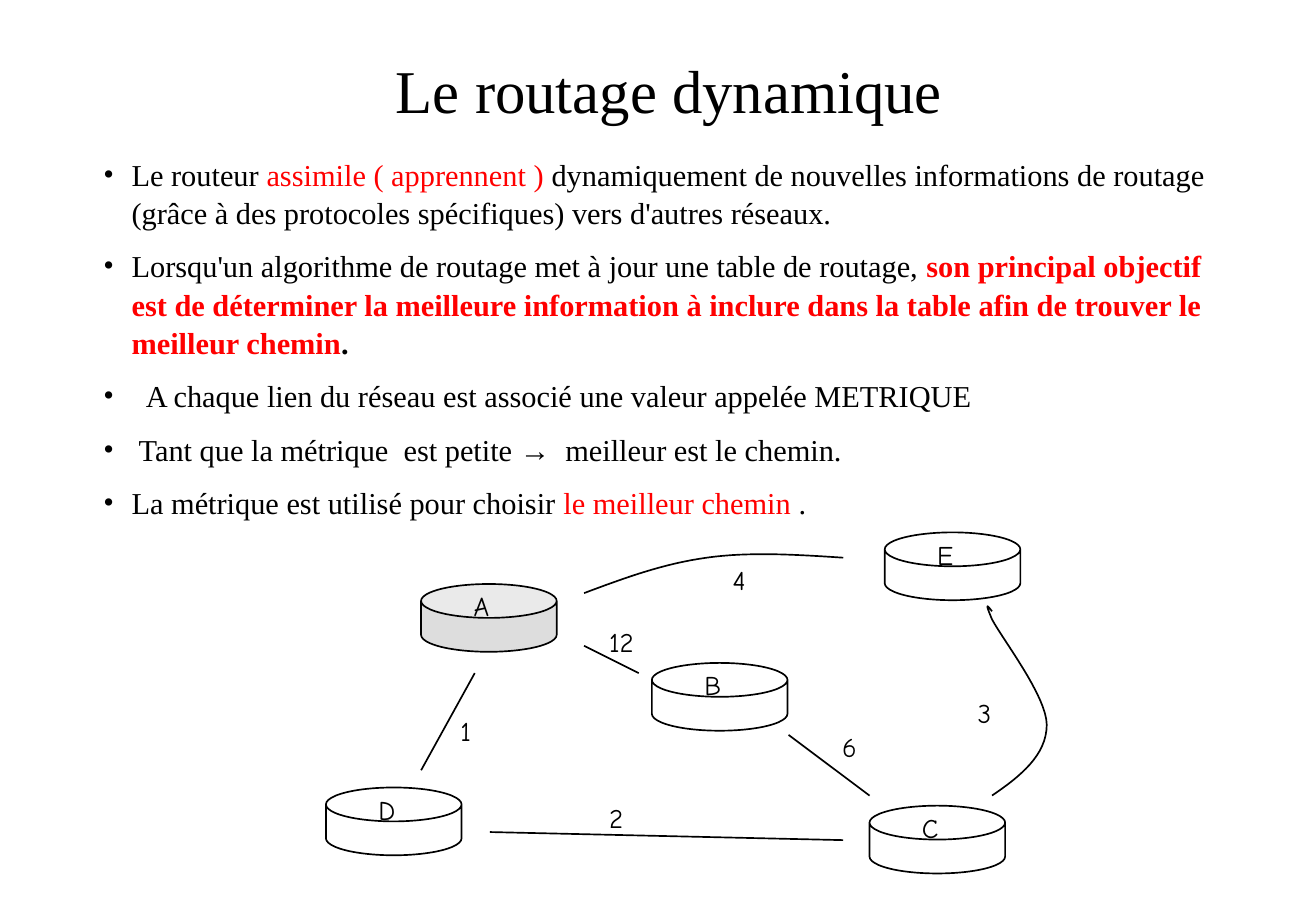
from lxml.etree import SubElement
from pptx import Presentation
from pptx.dml.color import RGBColor
from pptx.enum.shapes import MSO_CONNECTOR, MSO_SHAPE
from pptx.enum.text import MSO_ANCHOR, MSO_AUTO_SIZE, PP_ALIGN
from pptx.oxml.ns import qn
from pptx.util import Pt

PX = 7620
COLORS = {"black": "000000", "red": "FF0000", "grey": "DDDDDD"}
SERIF, HAND = "Times New Roman", "Comic Neue"

BULLETS = [
    (0, [("Le routeur ", "black", False),
         ("assimile ( apprennent )", "red", False),
         (" dynamiquement de nouvelles informations de routage "
          "(grâce à des protocoles spécifiques) vers d'autres réseaux.", "black", False)]),
    (0, [("Lorsqu'un algorithme de routage met à jour une table de routage, ", "black", False),
         ("son principal objectif est de déterminer la meilleure information à inclure "
          "dans la table afin de trouver le meilleur chemin", "red", True),
         (".", "black", True)]),
    (14, [("A chaque lien du réseau est associé une valeur appelée METRIQUE", "black", False)]),
    (7, [("Tant que la métrique  est petite →  meilleur est le chemin.", "black", False)]),
    (0, [("La métrique est utilisé pour choisir ", "black", False),
         ("le meilleur chemin", "red", False),
         (" .", "black", False)]),
]
ROUTERS = [("A", 416, 577, "grey"), ("B", 644, 655, None), ("C", 859, 796, None),
           ("D", 322, 778, None), ("E", 874, 526, None)]
LINKS = [(577, 638, 631, 665), (469, 665, 416, 761),
         (484, 822, 833, 830), (779, 726, 859, 786)]
CURVES = [
    [(577, 586), (617, 571), (655, 557), (698, 551), (740, 545), (787, 548), (833, 551)],
    [(980, 604), (976, 599), (972, 593), (980, 612), (990, 631), (1034, 688),
     (1034, 716), (1034, 746), (1008, 767), (980, 786)],
]
METRICS = [("4", 712, 551), ("1", 443, 700), ("2", 590, 786),
           ("6", 820, 716), ("12", 590, 612), ("3", 954, 682)]


def rgb(name):
    return RGBColor.from_string(COLORS[name])


def bezier(points, steps=16):
    for i in range(0, len(points) - 1, 3):
        a, b, c, d = points[i:i + 4]
        for n in range(1, steps + 1):
            t = n / steps
            u = 1 - t
            yield tuple(PX * (u**3 * p + 3 * u * u * t * q + 3 * u * t * t * r + t**3 * s)
                        for p, q, r, s in zip(a, b, c, d))


class SlideBuilder:
    def __init__(self, slide):
        self.slide = slide
        self.shapes = slide.shapes

    def place(self, sp, x, y, w, h):
        sp.left, sp.top, sp.width, sp.height = (v * PX for v in (x, y, w, h))

    def run(self, p, text, size, font, color="black", bold=False):
        r = p.add_run()
        r.text = text
        r.font.size = Pt(size)
        r.font.name = font
        r.font.bold = bold
        r.font.color.rgb = rgb(color)

    def frame(self, sp, anchor=MSO_ANCHOR.TOP):
        tf = sp.text_frame
        tf.word_wrap = True
        tf.auto_size = MSO_AUTO_SIZE.NONE
        tf.vertical_anchor = anchor
        tf.margin_left = tf.margin_right = 12 * PX
        tf.margin_top = tf.margin_bottom = 6 * PX
        return tf

    def outline(self, sp):
        sp.line.color.rgb = rgb("black")
        sp.line.width = Pt(1)

    def title(self, text, *box):
        sp = self.shapes.title
        self.place(sp, *box)
        p = self.frame(sp, MSO_ANCHOR.MIDDLE).paragraphs[0]
        p.alignment = PP_ALIGN.CENTER
        self.run(p, text, 36, SERIF)

    def bullets(self, items, *box):
        sp = self.slide.placeholders[1]
        self.place(sp, *box)
        tf = self.frame(sp)
        for i, (shift, runs) in enumerate(items):
            p = tf.add_paragraph() if i else tf.paragraphs[0]
            margin = (28 + shift) * PX
            pPr = p._p.get_or_add_pPr()
            pPr.set("marL", str(margin))
            pPr.set("indent", str(-margin))
            SubElement(pPr, qn("a:buFont")).set("typeface", SERIF)
            SubElement(pPr, qn("a:buChar")).set("char", "•")
            p.alignment = PP_ALIGN.LEFT
            p.line_spacing = 1.05
            p.space_before = Pt(9 if i else 0)
            for text, color, bold in runs:
                self.run(p, text, 18, SERIF, color, bold)

    def label(self, text, x, y):
        sp = self.shapes.add_textbox(0, 0, 0, 0)
        self.place(sp, x, y, 70, 38)
        self.run(self.frame(sp).paragraphs[0], text, 16, HAND)

    def router(self, name, x, y, fill):
        sp = self.shapes.add_shape(MSO_SHAPE.CAN, 0, 0, 0, 0)
        self.place(sp, x, y, 134, 67)
        sp.adjustments[0] = 0.5
        if fill:
            sp.fill.solid()
            sp.fill.fore_color.rgb = rgb(fill)
        else:
            sp.fill.background()
        self.outline(sp)
        sp.shadow.inherit = False
        self.label(name, x + 40, y)

    def link(self, *ends):
        sp = self.shapes.add_connector(MSO_CONNECTOR.STRAIGHT, *(v * PX for v in ends))
        self.outline(sp)
        SubElement(sp._element.spPr, qn("a:effectLst"))

    def curve(self, points):
        x, y = points[0]
        builder = self.shapes.build_freeform(x * PX, y * PX)
        builder.add_line_segments(list(bezier(points)), close=False)
        sp = builder.convert_to_shape()
        sp.fill.background()
        self.outline(sp)
        sp.shadow.inherit = False


def main():
    prs = Presentation()
    prs.slide_width, prs.slide_height = 1300 * PX, 900 * PX
    s = SlideBuilder(prs.slides.add_slide(prs.slide_layouts[1]))
    s.title("Le routage dynamique", 47, 47, 1228, 83)
    s.bullets(BULLETS, 90, 146, 1120, 547)
    for router in ROUTERS:
        s.router(*router)
    for points in CURVES:
        s.curve(points)
    for ends in LINKS:
        s.link(*ends)
    for metric in METRICS:
        s.label(*metric)
    prs.save("out.pptx")


if __name__ == "__main__":
    main()
